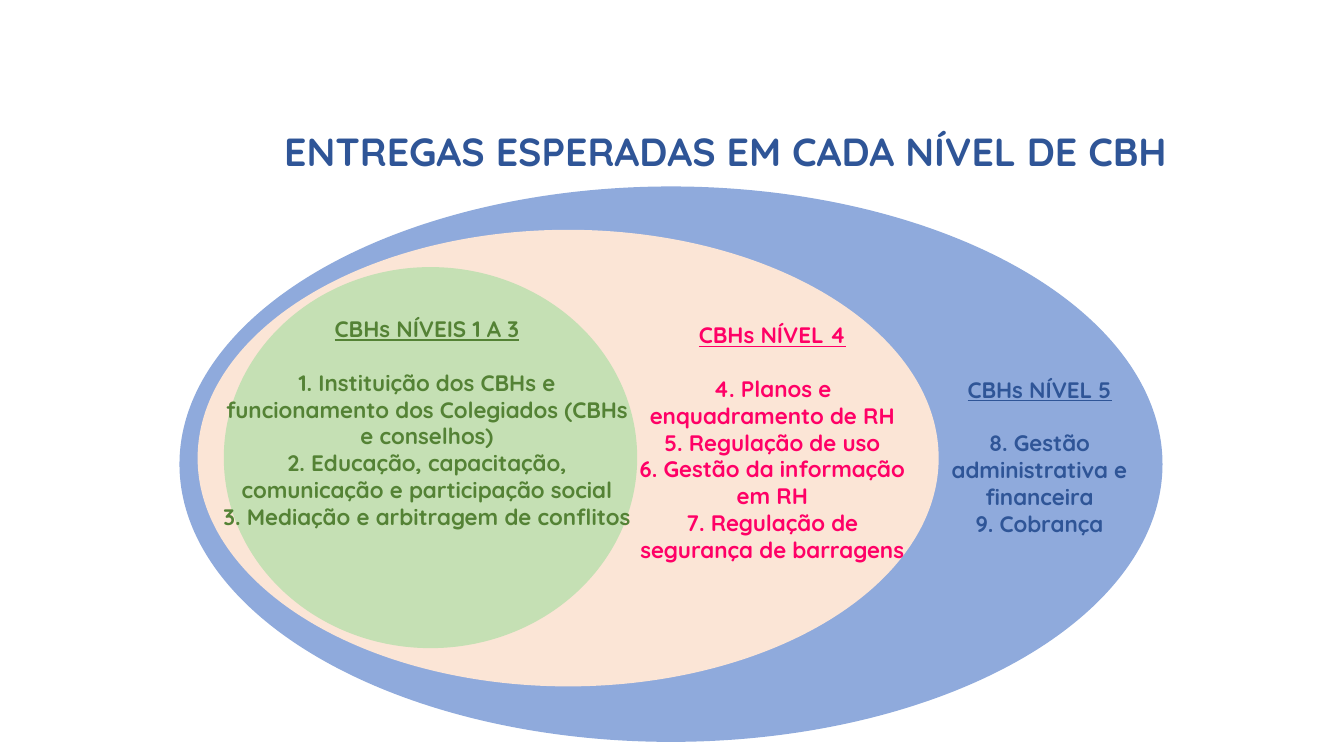
from pptx import Presentation
from pptx.dml.color import RGBColor
from pptx.enum.shapes import MSO_SHAPE
from pptx.enum.text import MSO_ANCHOR, MSO_AUTO_SIZE, PP_ALIGN
from pptx.util import Inches, Pt

FONT = "Quicksand"
COLORS = {
    "blue": "2F5597",
    "light blue": "8FAADC",
    "pink": "FF0066",
    "peach": "FBE5D6",
    "green": "548235",
    "light green": "C5E0B4",
}

# Levels from the outermost ellipse to the innermost; boxes are left, top, width, height.
LEVELS = [
    {
        "ellipse": (1.78, 1.85, 9.75, 5.51),
        "fill": "light blue",
        "text_box": (9.2, 3.68, 2.22, 1.72),
        "color": "blue",
        "heading": "CBHs NÍVEL 5",
        "deliveries": ["8. Gestão administrativa e financeira", "9. Cobrança"],
    },
    {
        "ellipse": (1.96, 2.28, 7.35, 4.53),
        "fill": "peach",
        "text_box": (6.24, 3.14, 2.84, 2.79),
        "color": "pink",
        "heading": "CBHs NÍVEL 4",
        "deliveries": [
            "4. Planos e enquadramento de RH",
            "5. Regulação de uso",
            "6. Gestão da informação em RH",
            "7. Regulação de segurança de barragens",
        ],
    },
    {
        "ellipse": (2.22, 2.65, 4.1, 3.78),
        "fill": "light green",
        "text_box": (2.09, 3.08, 4.29, 2.52),
        "color": "green",
        "heading": "CBHs NÍVEIS 1 A 3",
        "deliveries": [
            "1. Instituição dos CBHs e funcionamento dos Colegiados (CBHs e conselhos)",
            "2. Educação, capacitação, comunicação e participação social",
            "3. Mediação e arbitragem de conflitos",
        ],
    },
]


def to_inches(box):
    return [Inches(value) for value in box]


def format_paragraph(paragraph, size, color, alignment):
    paragraph.alignment = alignment
    for run in paragraph.runs:
        run.font.name = FONT
        run.font.size = Pt(size)
        run.font.bold = True
        run.font.color.rgb = RGBColor.from_string(COLORS[color])


def place_title(slide, text, box):
    title = slide.shapes.title
    title.left, title.top, title.width, title.height = to_inches(box)
    text_frame = title.text_frame
    text_frame.text = text
    text_frame.word_wrap = True
    text_frame.auto_size = MSO_AUTO_SIZE.NONE
    text_frame.vertical_anchor = MSO_ANCHOR.TOP
    format_paragraph(text_frame.paragraphs[0], 28, "blue", PP_ALIGN.RIGHT)


def add_ellipse(slide, box, fill):
    ellipse = slide.shapes.add_shape(MSO_SHAPE.OVAL, *to_inches(box))
    ellipse.shadow.inherit = False
    ellipse.fill.solid()
    ellipse.fill.fore_color.rgb = RGBColor.from_string(COLORS[fill])
    ellipse.line.fill.background()


def add_deliveries(slide, box, heading, deliveries, color):
    text_frame = slide.shapes.add_textbox(*to_inches(box)).text_frame
    text_frame.word_wrap = True
    text_frame.text = "\n".join([heading, *deliveries])
    for paragraph in text_frame.paragraphs:
        format_paragraph(paragraph, 16, color, PP_ALIGN.CENTER)
    heading_paragraph = text_frame.paragraphs[0]
    heading_paragraph.runs[0].font.underline = True
    heading_paragraph.space_after = Pt(19)


def add_level(slide, level):
    add_ellipse(slide, level["ellipse"], level["fill"])
    add_deliveries(slide, level["text_box"], level["heading"],
                   level["deliveries"], level["color"])


def main():
    presentation = Presentation()
    presentation.slide_width = Inches(13.33)
    presentation.slide_height = Inches(7.5)
    slide = presentation.slides.add_slide(presentation.slide_layouts[5])
    place_title(slide, "ENTREGAS ESPERADAS EM CADA NÍVEL DE CBH", (2.57, 1.21, 9.1, 0.57))
    for level in LEVELS:
        add_level(slide, level)
    presentation.save("out.pptx")


if __name__ == "__main__":
    main()
